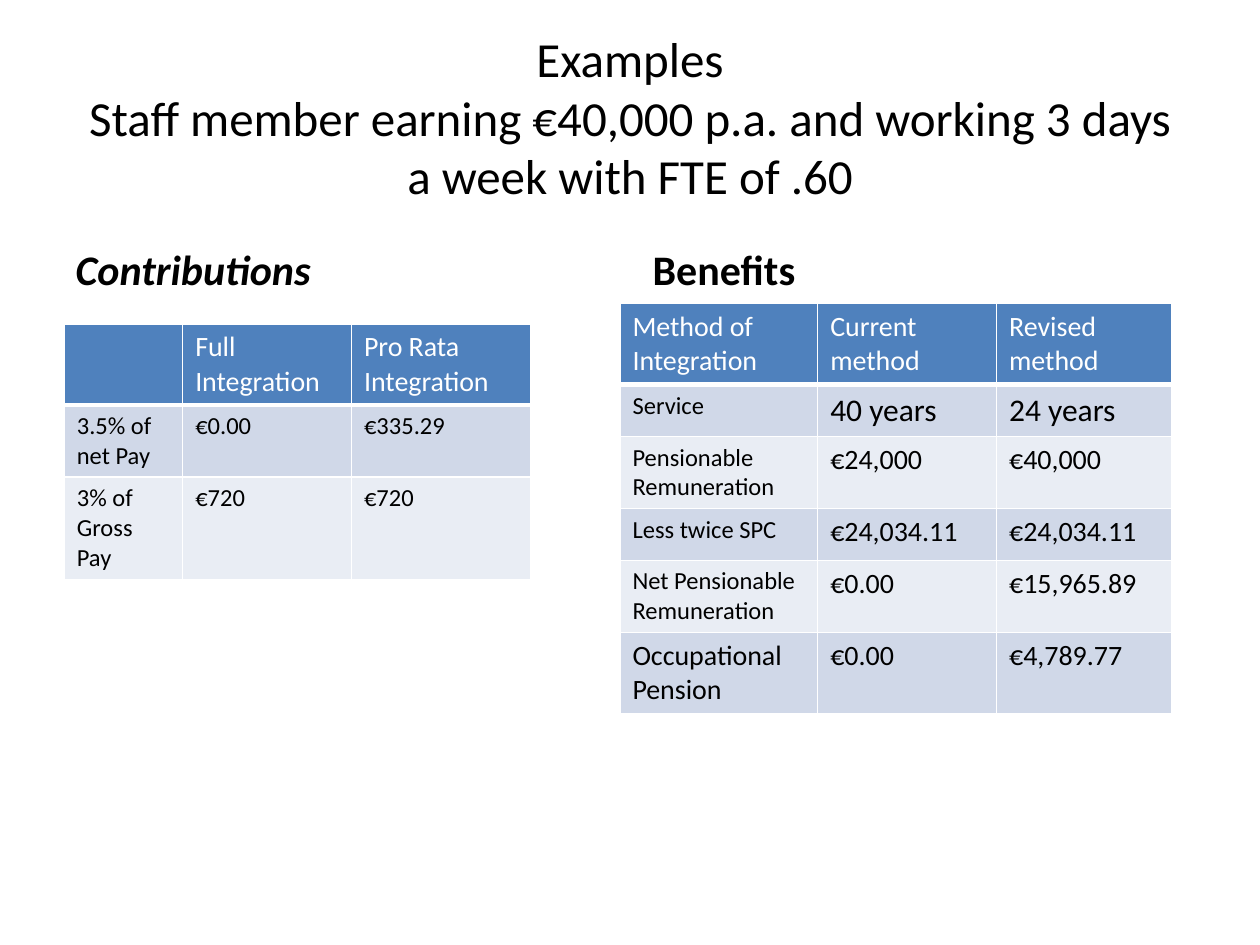
from dataclasses import dataclass

from lxml.etree import SubElement
from pptx import Presentation
from pptx.dml.color import RGBColor
from pptx.enum.text import MSO_ANCHOR, PP_ALIGN
from pptx.oxml.ns import qn
from pptx.util import Inches, Pt


@dataclass(frozen=True)
class Theme:
    """Colours, font and type sizes of the slide."""
    font: str = "Calibri"
    ink: str = "000000"
    white: str = "FFFFFF"
    header: str = "4F81BD"
    bands: tuple = ("D0D8E8", "E9EDF4")
    title: int = 28
    heading: int = 24
    large: int = 18
    medium: int = 16
    small: int = 14


THEME = Theme()

CONTRIBUTIONS = [
    ("", "Full Integration", "Pro Rata Integration"),
    ("3.5% of net Pay", "€0.00", "€335.29"),
    ("3% of Gross Pay", "€720", "€720"),
]
CONTRIBUTION_SIZES = [(THEME.medium,) * 3] + [(THEME.small,) * 3] * 2

BENEFITS = [
    ("Method of Integration", "Current method", "Revised method"),
    ("Service", "40 years", "24 years"),
    ("Pensionable Remuneration", "€24,000", "€40,000"),
    ("Less twice SPC", "€24,034.11", "€24,034.11"),
    ("Net Pensionable Remuneration", "€0.00", "€15,965.89"),
    ("Occupational Pension", "€0.00", "€4,789.77"),
]
BENEFIT_SIZES = [
    (THEME.medium,) * 3,
    (THEME.small, THEME.large, THEME.large),
    *[(THEME.small, THEME.medium, THEME.medium)] * 3,
    (THEME.medium,) * 3,
]


def style_paragraph(paragraph, size, color=THEME.ink, bold=False, italic=False):
    """Set the font of a whole paragraph."""
    font = paragraph.font
    font.name, font.size = THEME.font, Pt(size)
    font.bold, font.italic = bold, italic
    font.color.rgb = RGBColor.from_string(color)


def fill_placeholder(placeholder, text, box, size, anchor, align, **style):
    """Place a template placeholder and write its text."""
    placeholder.left, placeholder.top, placeholder.width, placeholder.height = map(Inches, box)
    frame = placeholder.text_frame
    frame.text = text
    frame.vertical_anchor = anchor
    frame.paragraphs[0].alignment = align
    style_paragraph(frame.paragraphs[0], size, **style)


def add_borders(cell, bottom_width):
    """Draw white borders around a cell."""
    properties = cell._tc.get_or_add_tcPr()
    widths = {"a:lnL": 1, "a:lnR": 1, "a:lnT": 1, "a:lnB": bottom_width}
    for position, (side, width) in enumerate(widths.items()):
        line = properties.makeelement(qn(side), {"w": str(Pt(width))})
        SubElement(SubElement(line, qn("a:solidFill")), qn("a:srgbClr"), val=THEME.white)
        properties.insert(position, line)


def add_data_table(slide, rows, sizes, left, top, column_widths, row_heights):
    """Add a table with a header row and alternating bands."""
    table = slide.shapes.add_table(
        len(rows), len(column_widths), Inches(left), Inches(top),
        Inches(sum(column_widths)), Inches(sum(row_heights))).table
    table.first_row = table.horz_banding = False
    for column, width in zip(table.columns, column_widths):
        column.width = Inches(width)
    for index, (row, height) in enumerate(zip(table.rows, row_heights)):
        row.height = Inches(height)
        is_header = index == 0
        fill = THEME.header if is_header else THEME.bands[(index - 1) % 2]
        for cell, text, size in zip(row.cells, rows[index], sizes[index]):
            cell.text = text
            style_paragraph(cell.text_frame.paragraphs[0], size,
                            THEME.white if is_header else THEME.ink)
            cell.fill.solid()
            cell.fill.fore_color.rgb = RGBColor.from_string(fill)
            add_borders(cell, 3 if is_header else 1)


def main():
    """Build the slide comparing contributions and benefits."""
    deck = Presentation()
    deck.slide_width, deck.slide_height = Inches(10), Inches(7.5)
    slide = deck.slides.add_slide(deck.slide_layouts.get_by_name("Comparison"))
    title, contributions, left_body, benefits, right_body = slide.placeholders
    for unused in (left_body, right_body):
        unused.element.getparent().remove(unused.element)

    fill_placeholder(
        title,
        "Examples\vStaff member earning €40,000 p.a. and working 3 days a week with FTE of .60",
        (0.5, 0.3, 9, 1.25), THEME.title, MSO_ANCHOR.MIDDLE, PP_ALIGN.CENTER)
    fill_placeholder(contributions, "Contributions", (0.5, 1.68, 4.42, 0.7),
                     THEME.heading, MSO_ANCHOR.BOTTOM, PP_ALIGN.LEFT, bold=True, italic=True)
    fill_placeholder(benefits, "Benefits", (5.08, 1.68, 4.42, 0.7),
                     THEME.heading, MSO_ANCHOR.BOTTOM, PP_ALIGN.LEFT, bold=True)

    add_data_table(slide, CONTRIBUTIONS, CONTRIBUTION_SIZES, 0.51, 2.57,
                   (0.94, 1.34, 1.42), (0.44,) * 3)
    add_data_table(slide, BENEFITS, BENEFIT_SIZES, 4.92, 2.41,
                   (1.57, 1.42, 1.39), (0.56,) + (0.41,) * 5)
    deck.save("out.pptx")


if __name__ == "__main__":
    main()
